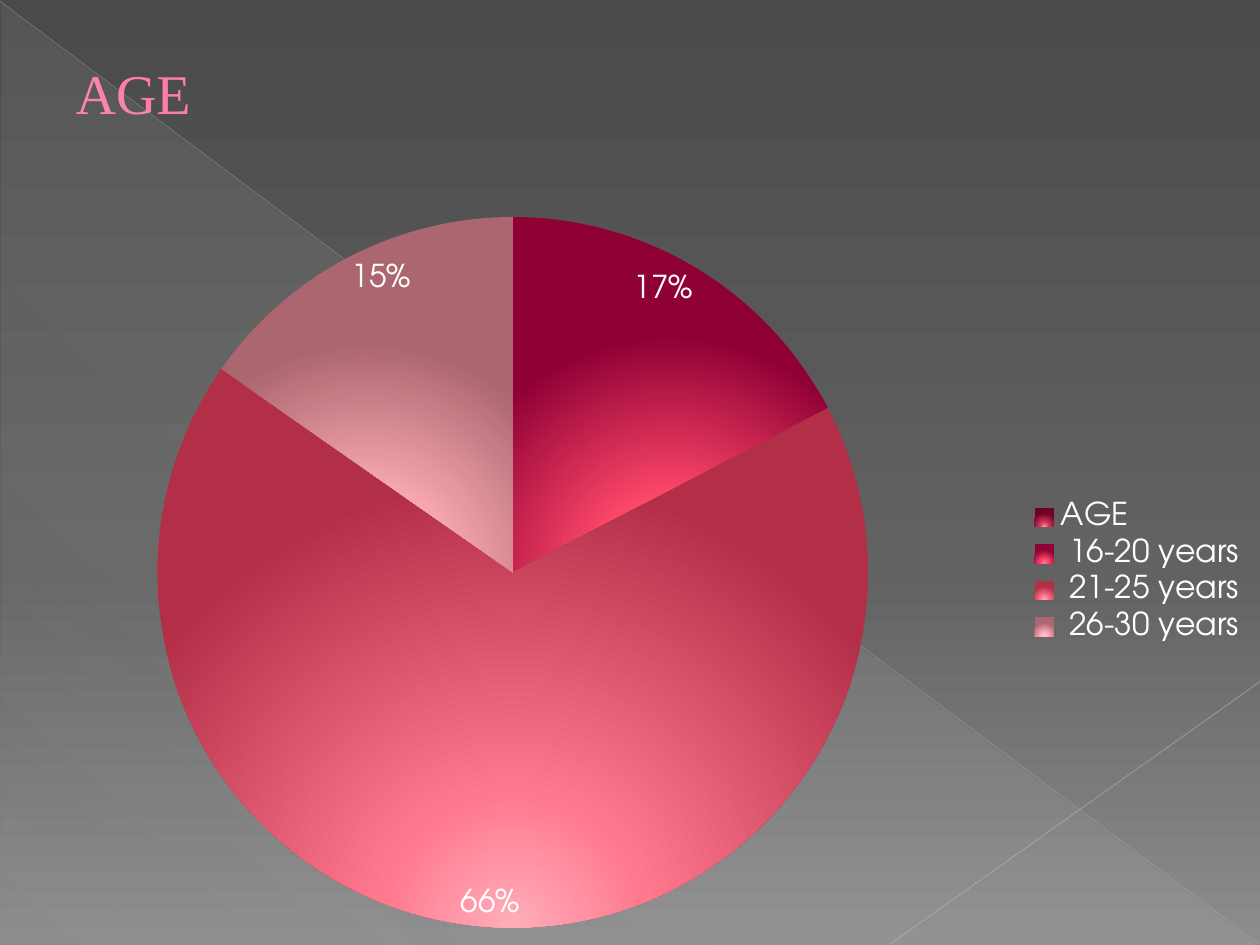
"""Build the AGE slide with a pie chart of age groups."""
from lxml import etree
from pptx import Presentation
from pptx import util as u
from pptx.chart.data import CategoryChartData
from pptx.dml.color import RGBColor
from pptx.enum import chart as charts, shapes, text
from pptx.oxml.ns import qn

LABEL_FONT = "TeX Gyre Adventor"
AGE_SHARES = {"AGE": None, " 16-20 years": 0.17, " 21-25 years": 0.66, " 26-30 years": 0.15}
SLICE_TONES = [
    ("FF9AA8", "D8405C", "70002B"),
    ("FF7890", "FF4A6A", "8F0035"),
    ("FFAEBA", "FF788E", "B32E47"),
    ("FFC4CB", "FFAEB8", "AC666F"),
]


def rgb(value):
    """Turn a hex string into a colour."""
    return RGBColor.from_string(value)


def add_alpha(color, percent):
    """Set the opacity of a colour element."""
    etree.SubElement(color, qn("a:alpha"), val=str(percent * 1000))


def paint_gradient(fill, owner, stops, angle=None):
    """Fill with (position, colour, opacity) stops, radial if no angle is given."""
    fill.solid()
    solid = next(owner.iter(qn("a:solidFill")))
    gradient = etree.Element(qn("a:gradFill"), rotWithShape="1")
    stop_list = etree.SubElement(gradient, qn("a:gsLst"))
    for position, value, opacity in stops:
        stop = etree.SubElement(stop_list, qn("a:gs"), pos=str(position * 1000))
        color = etree.SubElement(stop, qn("a:srgbClr"), val=value)
        if opacity < 100:
            add_alpha(color, opacity)
    if angle is None:
        radial = etree.SubElement(gradient, qn("a:path"), path="circle")
        etree.SubElement(radial, qn("a:fillToRect"), l="50000", t="130000", r="50000", b="-30000")
    else:
        etree.SubElement(gradient, qn("a:lin"), ang=str(angle * 60000), scaled="0")
    solid.getparent().replace(solid, gradient)


def add_backdrop(slide):
    """Add the grey background and its translucent triangle."""
    greys = [(0, "4A4A4A", 100), (60, "626262", 100), (100, "8C8C8C", 100)]
    paint_gradient(slide.background.fill, slide.element, greys, 90)
    triangle = slide.shapes.add_shape(
        shapes.MSO_SHAPE.RIGHT_TRIANGLE,
        u.Inches(0.01), u.Inches(0.02), u.Inches(9.98), u.Inches(7.48))
    triangle.shadow.inherit = False
    triangle.line.fill.background()
    veil = [(0, "D2D2D2", 10), (70, "D2D2D2", 8), (100, "D2D2D2", 1)]
    paint_gradient(triangle.fill, triangle.element.spPr, veil, 133)


def add_diagonal(slide, start, end, color, width, opacity):
    """Add a translucent line between two points in inches."""
    diagonal = slide.shapes.add_connector(
        shapes.MSO_CONNECTOR.STRAIGHT, *map(u.Inches, start + end))
    diagonal.line.width = u.Pt(width)
    diagonal.line.color.rgb = rgb(color)
    properties = diagonal.element.spPr
    add_alpha(next(properties.iter(qn("a:srgbClr"))), opacity)
    etree.SubElement(properties, qn("a:effectLst"))


def add_title(slide, wording):
    """Place and format the title."""
    title = slide.shapes.title
    title.left, title.top = u.Inches(0.5), u.Inches(0.3)
    title.width, title.height = u.Inches(9), u.Inches(0.87)
    title.text_frame.vertical_anchor = text.MSO_ANCHOR.MIDDLE
    paragraph = title.text_frame.paragraphs[0]
    paragraph.alignment = text.PP_ALIGN.LEFT
    run = paragraph.add_run()
    run.text = wording
    run.font.name, run.font.size = "Times New Roman", u.Pt(32)
    run.font.color.rgb = rgb("FF7DA7")


def set_plot_layout(chart, **fractions):
    """Fix the inner plot area as fractions of the chart."""
    plot_area = next(chart.element.iter(qn("c:plotArea")))
    layout = plot_area.find(qn("c:layout"))
    if layout is None:
        layout = etree.Element(qn("c:layout"))
        plot_area.insert(0, layout)
    manual = etree.SubElement(layout, qn("c:manualLayout"))
    settings = {"layoutTarget": "inner", "xMode": "edge", "yMode": "edge", **fractions}
    for name, value in settings.items():
        etree.SubElement(manual, qn(f"c:{name}"), val=str(value))


def add_age_pie(slide):
    """Add the pie chart with its legend and labels."""
    ages = CategoryChartData(number_format="0%")
    ages.categories = list(AGE_SHARES)
    ages.add_series("Series 1", list(AGE_SHARES.values()))
    chart = slide.shapes.add_chart(
        charts.XL_CHART_TYPE.PIE, u.Inches(0), u.Inches(1.58),
        u.Inches(10), u.Inches(5.92), ages).chart
    chart.font.name, chart.font.size = LABEL_FONT, u.Pt(18)
    chart.font.color.rgb = rgb("FFFFFF")
    chart.has_title = False
    chart.has_legend = True
    chart.legend.position = charts.XL_LEGEND_POSITION.RIGHT
    chart.legend.include_in_layout = False
    set_plot_layout(chart, x=0.125, y=0.024, w=0.564, h=0.953)

    plot = chart.plots[0]
    plot.vary_by_categories = True
    plot.has_data_labels = True
    labels = plot.data_labels
    labels.show_value, labels.show_percentage = True, False
    labels.number_format, labels.number_format_is_linked = "0%", False
    labels.position = charts.XL_LABEL_POSITION.INSIDE_END
    for index, (inner, middle, outer) in enumerate(SLICE_TONES):
        look = plot.series[0].points[index].format
        look.line.fill.background()
        stops = [(0, inner, 100), (30, middle, 100), (100, outer, 100)]
        paint_gradient(look.fill, look._element, stops)


def main():
    """Build and save the slide."""
    deck = Presentation()
    deck.slide_width, deck.slide_height = u.Inches(10), u.Inches(7.5)
    slide = deck.slides.add_slide(deck.slide_layouts[5])
    add_backdrop(slide)
    add_diagonal(slide, (0, 0.01), (9.99, 7.49), "BFBFBF", 0.39, 35)
    add_diagonal(slide, (10, 5.41), (7.07, 7.49), "C6C6C6", 0.47, 45)
    add_title(slide, "AGE")
    add_age_pie(slide)
    deck.save("out.pptx")


if __name__ == "__main__":
    main()
